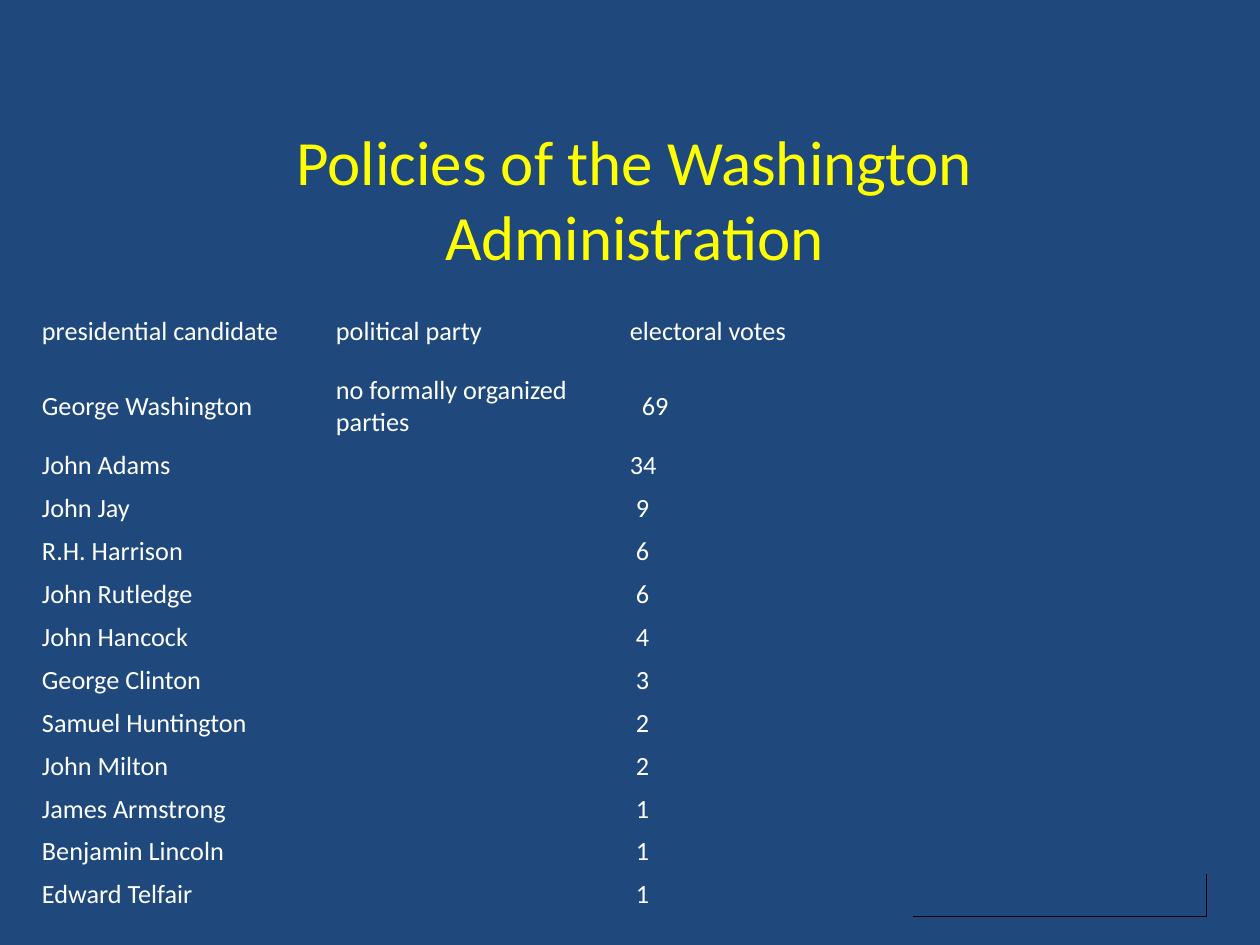
from dataclasses import dataclass

from lxml import etree
from pptx import Presentation
from pptx import util as u
from pptx.dml.color import RGBColor
from pptx.enum import text
from pptx.oxml import ns

EMU_PER_PX = 914400 // 126


@dataclass(frozen=True)
class Theme:
    font: str = "Calibri"
    background: str = "1F497D"
    heading: str = "FFFF00"
    body: str = "FFFFFF"
    border: str = "000000"
    heading_size: int = 36
    body_size: int = 15


@dataclass(frozen=True)
class Candidate:
    name: str
    votes: int
    party: str = ""
    indent: int = 6


THEME = Theme()
HEADERS = ("presidential candidate", "political party", "electoral votes")
CANDIDATES = (
    Candidate("George Washington", 69, "no formally organized parties", indent=12),
    Candidate("John Adams", 34, indent=0),
    Candidate("John Jay", 9),
    Candidate("R.H. Harrison", 6),
    Candidate("John Rutledge", 6),
    Candidate("John Hancock", 4),
    Candidate("George Clinton", 3),
    Candidate("Samuel Huntington", 2),
    Candidate("John Milton", 2),
    Candidate("James Armstrong", 1),
    Candidate("Benjamin Lincoln", 1),
    Candidate("Edward Telfair", 1),
)
COLUMNS = 4
COLUMN_WIDTH = 294
TALL_ROW, SHORT_ROW = 75, 43
TALL_ROWS = 2


def px(length: int) -> u.Emu:
    return u.Emu(length * EMU_PER_PX)


def write(frame, words: str, *, size: int, color: str, align=None) -> None:
    """Put formatted text in a frame; an empty frame keeps the text size."""
    para = frame.paragraphs[0]
    para.alignment = align
    if not words:
        para._p.get_or_add_endParaRPr().set("sz", str(size * 100))
        return
    span = para.add_run()
    span.text = words
    span.font.name = THEME.font
    span.font.size = u.Pt(size)
    span.font.color.rgb = RGBColor.from_string(color)


def set_borders(cell, visible: str = "") -> None:
    """Show only the sides named by the letters L, R, T and B."""
    properties = cell._tc.get_or_add_tcPr()
    for position, side in enumerate("LRTB"):
        line = etree.Element(ns.qn(f"a:ln{side}"), w=str(u.Pt(0.75)))
        if side in visible:
            fill = etree.SubElement(line, ns.qn("a:solidFill"))
            etree.SubElement(fill, ns.qn("a:srgbClr"), val=THEME.border)
        else:
            etree.SubElement(line, ns.qn("a:noFill"))
        properties.insert(position, line)


def draw_title(page, words: str) -> None:
    box = page.shapes.title
    box.left, box.top, box.width, box.height = map(px, (94, 116, 1081, 242))
    frame = box.text_frame
    frame.word_wrap = True
    frame.auto_size = text.MSO_AUTO_SIZE.NONE
    frame.vertical_anchor = text.MSO_ANCHOR.TOP
    write(frame, words, size=THEME.heading_size, color=THEME.heading,
          align=text.PP_ALIGN.CENTER)


def draw_table(page, candidates: tuple[Candidate, ...]) -> None:
    count = len(candidates) + 1
    heights = [TALL_ROW] * TALL_ROWS + [SHORT_ROW] * (count - TALL_ROWS)
    table = page.shapes.add_table(
        count, COLUMNS, px(31), px(294),
        px(COLUMNS * COLUMN_WIDTH), px(sum(heights))).table
    table.first_row = table.horz_banding = False
    for column in table.columns:
        column.width = px(COLUMN_WIDTH)

    rows = [(*HEADERS, "")]
    rows += [(one.name, one.party, str(one.votes), "") for one in candidates]
    indents = [0] + [one.indent for one in candidates]
    for r, (words, height) in enumerate(zip(rows, heights)):
        table.rows[r].height = px(height)
        for c, entry in enumerate(words):
            cell = table.cell(r, c)
            cell.fill.background()
            cell.vertical_anchor = text.MSO_ANCHOR.MIDDLE
            cell.margin_left = px(11 + (indents[r] if c == 2 else 0))
            cell.margin_right = px(11)
            cell.margin_top = cell.margin_bottom = px(5)
            write(cell.text_frame, entry, size=THEME.body_size, color=THEME.body)
            is_corner = (r, c) == (count - 1, COLUMNS - 1)
            set_borders(cell, "RB" if is_corner else "")


def main() -> None:
    deck = Presentation()
    deck.slide_width, deck.slide_height = px(1260), px(945)
    page = deck.slides.add_slide(deck.slide_layouts[5])

    # Background
    fill = page.background.fill
    fill.solid()
    fill.fore_color.rgb = RGBColor.from_string(THEME.background)

    # Title and election results
    draw_title(page, "Policies of the Washington Administration")
    draw_table(page, CANDIDATES)
    deck.save("out.pptx")


if __name__ == "__main__":
    main()
